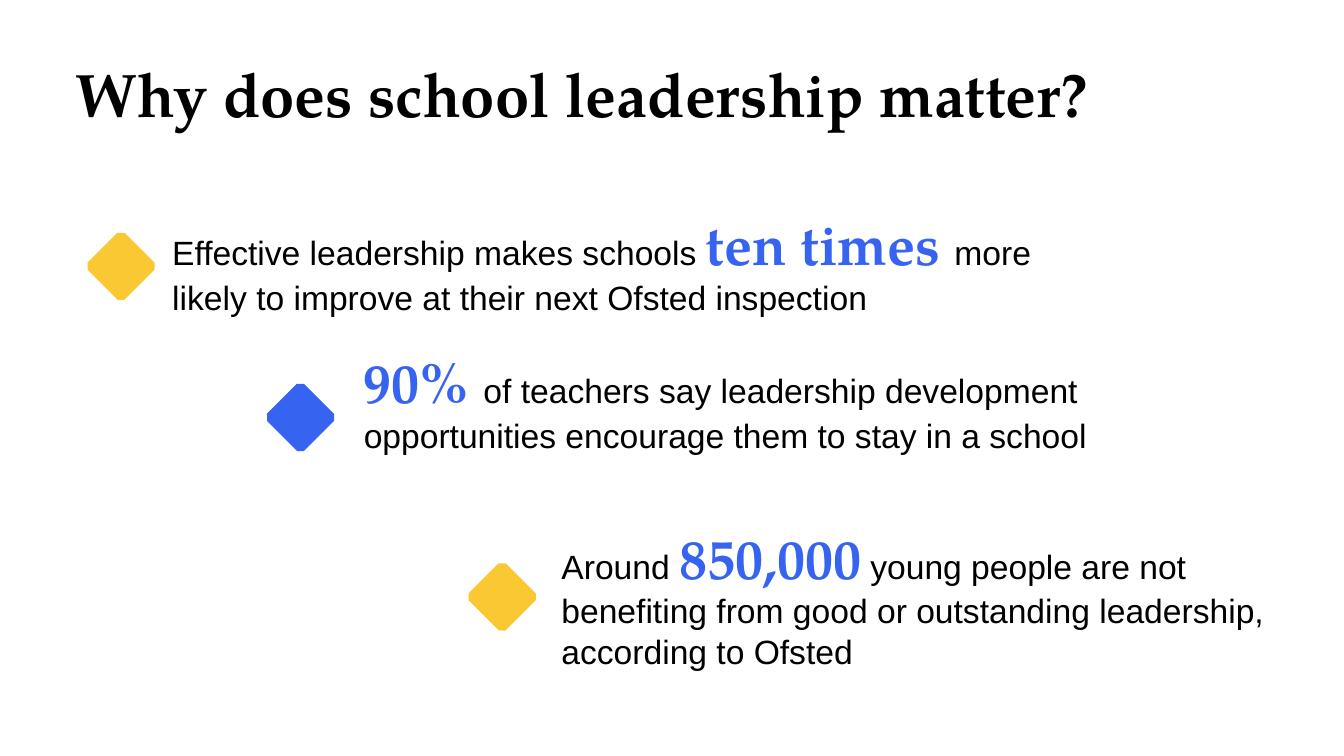
from dataclasses import dataclass

from pptx import Presentation
from pptx.dml.color import RGBColor
from pptx.enum.shapes import MSO_SHAPE
from pptx.enum.text import MSO_ANCHOR, MSO_AUTO_SIZE
from pptx.util import Inches, Pt

SNIPPED_SQUARE = MSO_SHAPE.SNIP_2_SAME_RECTANGLE
BOTTOM = MSO_ANCHOR.BOTTOM
GROW = MSO_AUTO_SIZE.SHAPE_TO_FIT_TEXT
FIXED = MSO_AUTO_SIZE.NONE


@dataclass(frozen=True)
class Theme:
    """Colours, fonts and type sizes of the slide."""

    black: RGBColor = RGBColor.from_string("000000")
    blue: RGBColor = RGBColor.from_string("3663F0")
    yellow: RGBColor = RGBColor.from_string("FAC832")
    body_font: str = "Arial"
    display_font: str = "TeX Gyre Pagella"
    body_size: int = 24
    figure_size: int = 40
    title_size: int = 44


THEME = Theme()

FACTS = [
    ((1.61, 2.03, 8.86, 1.55), (0.94, 2.38), THEME.yellow,
     "Effective leadership makes schools ", "ten times ",
     "more likely to improve at their next Ofsted inspection"),
    ((3.51, 3.4, 7.55, 1.48), (2.72, 3.88), THEME.blue,
     "", "90% ",
     "of teachers say leadership development opportunities "
     "encourage them to stay in a school"),
    ((5.47, 5.14, 7.45, 1.58), (4.72, 5.66), THEME.yellow,
     "Around ", "850,000",
     " young people are not benefiting from good or outstanding "
     "leadership, according to Ofsted"),
]


def add_run(paragraph, text, *, size=THEME.body_size, font=THEME.body_font,
            color=THEME.black, bold=False):
    """Append formatted text to a paragraph."""
    run = paragraph.add_run()
    run.text = text
    run.font.size = Pt(size)
    run.font.name = font
    run.font.color.rgb = color
    run.font.bold = bold


def add_text_box(slide, box, auto_size):
    """Add a wrapping text box and return its text frame."""
    frame = slide.shapes.add_textbox(*map(Inches, box)).text_frame
    frame.word_wrap = True
    frame.auto_size = auto_size
    return frame


def add_title(slide, text):
    """Add the slide heading, standing on the bottom of its box."""
    frame = add_text_box(slide, (0.75, 0.48, 10.8, 0.82), FIXED)
    frame.vertical_anchor = BOTTOM
    frame.margin_left = frame.margin_right = 0
    frame.margin_top = frame.margin_bottom = 0
    paragraph = frame.paragraphs[0]
    paragraph.line_spacing = 0.9
    add_run(paragraph, text, size=THEME.title_size,
            font=THEME.display_font, bold=True)


def add_diamond(slide, position, color):
    """Add a square with snipped corners, turned onto its point."""
    left, top = map(Inches, position)
    side = Inches(0.52)
    shape = slide.shapes.add_shape(SNIPPED_SQUARE, left, top, side, side)
    shape.adjustments[0] = 0.1
    shape.adjustments[1] = 0.09
    shape.rotation = 315
    shape.shadow.inherit = False
    shape.fill.solid()
    shape.fill.fore_color.rgb = color
    shape.line.fill.background()


def add_fact(slide, box, marker, color, before, figure, after):
    """Add a marker and a sentence with its key figure picked out."""
    add_diamond(slide, marker, color)
    paragraph = add_text_box(slide, box, GROW).paragraphs[0]
    if before:
        add_run(paragraph, before)
    add_run(paragraph, figure, size=THEME.figure_size,
            font=THEME.display_font, color=THEME.blue, bold=True)
    add_run(paragraph, after)


def main():
    """Build the slide and save it."""
    presentation = Presentation()
    presentation.slide_width = Inches(13.33)
    presentation.slide_height = Inches(7.5)
    slide = presentation.slides.add_slide(presentation.slide_layouts[6])
    add_title(slide, "Why does school leadership matter?")
    for fact in FACTS:
        add_fact(slide, *fact)
    presentation.save("out.pptx")


if __name__ == "__main__":
    main()
